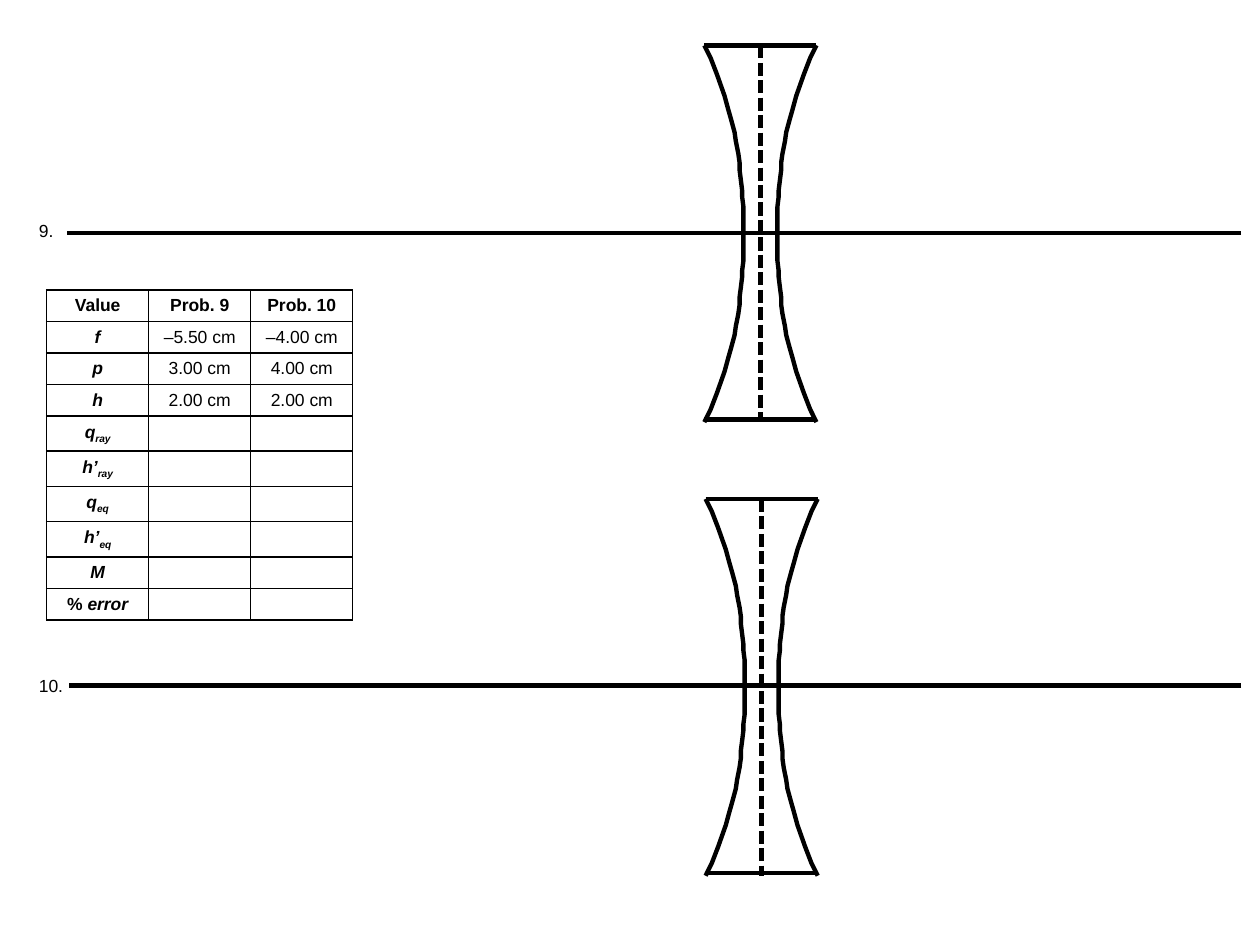
"""Build a diverging-lens ray diagram worksheet slide."""
from lxml.etree import SubElement
from pptx import Presentation
from pptx.dml.color import RGBColor
from pptx.enum.dml import MSO_LINE
from pptx.enum.shapes import MSO_CONNECTOR
from pptx.enum.text import MSO_ANCHOR, MSO_AUTO_SIZE, PP_ALIGN
from pptx.oxml import parse_xml
from pptx.oxml.ns import nsdecls, qn
from pptx.util import Inches, Pt

BLACK = RGBColor(0x00, 0x00, 0x00)
FONT = "Arial"
TEXT_SIZE = Pt(10)
STROKE = Pt(2.5)

LENS_WIDTH, LENS_HEIGHT = 0.89, 2.99
CURVE = [
    (0, 0), (0.05, 0.1), (0.1, 0.23), (0.16, 0.4), (0.19, 0.51), (0.21, 0.58),
    (0.24, 0.69), (0.25, 0.76), (0.27, 0.86), (0.28, 0.93), (0.28, 0.99),
    (0.29, 1.07), (0.3, 1.15), (0.3, 1.2), (0.31, 1.28), (0.31, 1.49),
]

PROBLEMS = [
    ("9.", 1.7, 0.32, 0.53, 1.85, 5.59, 0.36),
    ("10.", 5.31, 0.39, 0.55, 5.44, 5.6, 3.96),
]

HEADINGS = ["Value", "Prob. 9", "Prob. 10"]
QUANTITIES = [
    ("f", "", "–5.50 cm", "–4.00 cm"),
    ("p", "", "3.00 cm", "4.00 cm"),
    ("h", "", "2.00 cm", "2.00 cm"),
    ("q", "ray", "", ""),
    ("h’", "ray", "", ""),
    ("q", "eq", "", ""),
    ("h’", "eq", "", ""),
    ("M", "", "", ""),
    ("% error", "", "", ""),
]


def add_run(paragraph, text, bold=False, italic=False, subscript=False):
    """Append one formatted run to a paragraph."""
    run = paragraph.add_run()
    run.text = text
    font = run.font
    font.name, font.size = FONT, TEXT_SIZE
    font.bold, font.italic = bold, italic
    font.color.rgb = BLACK
    if subscript:
        font._element.set("baseline", "-25000")


def add_line(shapes, start, end, dashed=False):
    """Draw a straight black line between two points in inches."""
    line = shapes.add_connector(
        MSO_CONNECTOR.STRAIGHT, *map(Inches, start), *map(Inches, end))
    line.line.color.rgb = BLACK
    line.line.width = STROKE
    if dashed:
        line.line.dash_style = MSO_LINE.SQUARE_DOT
    SubElement(line._element.spPr, qn("a:effectLst"))


def add_curve(shapes, corner_x, corner_y, x_sign, y_sign):
    """Draw one quarter of the lens outline from a corner to the axis."""
    points = [(Inches(corner_x + x_sign * dx), Inches(corner_y + y_sign * dy))
              for dx, dy in CURVE]
    builder = shapes.build_freeform(*points[0])
    builder.add_line_segments(points[1:], close=False)
    curve = builder.convert_to_shape()
    curve.shadow.inherit = False
    curve.fill.background()
    curve.line.color.rgb = BLACK
    curve.line.width = STROKE


def add_lens(slide, left, top):
    """Draw a concave lens as a group of curves and lines."""
    shapes = slide.shapes.add_group_shape().shapes
    right, bottom = left + LENS_WIDTH, top + LENS_HEIGHT
    middle = left + LENS_WIDTH / 2
    for x, x_sign in ((left, 1), (right, -1)):
        for y, y_sign in ((top, 1), (bottom, -1)):
            add_curve(shapes, x, y, x_sign, y_sign)
    add_line(shapes, (middle, top), (middle, bottom), dashed=True)
    for edge in (top, bottom - 0.02):
        add_line(shapes, (left, edge), (right, edge))


def add_number(slide, text, top, width):
    """Add a problem number beside its axis."""
    box = slide.shapes.add_textbox(
        Inches(0.21), Inches(top), Inches(width), Inches(0.27))
    frame = box.text_frame
    frame.word_wrap = False
    frame.auto_size = MSO_AUTO_SIZE.SHAPE_TO_FIT_TEXT
    add_run(frame.paragraphs[0], text)


def format_cell(cell):
    """Clear the fill, draw the borders and centre the text of a cell."""
    cell.fill.background()
    cell.margin_top = cell.margin_bottom = Inches(0.04)
    cell.vertical_anchor = MSO_ANCHOR.MIDDLE
    cell.text_frame.paragraphs[0].alignment = PP_ALIGN.CENTER
    properties = cell._tc.get_or_add_tcPr()
    for index, side in enumerate(("lnL", "lnR", "lnT", "lnB")):
        properties.insert(index, parse_xml(
            f'<a:{side} {nsdecls("a")} w="{Pt(1)}"><a:solidFill>'
            f'<a:srgbClr val="{BLACK}"/></a:solidFill></a:{side}>'))


def write_quantity(paragraph, symbol, subscript):
    """Write a quantity symbol with its optional subscript."""
    if symbol.startswith("% "):
        add_run(paragraph, "% ", bold=True)
        symbol = symbol[2:]
    add_run(paragraph, symbol, bold=True, italic=True)
    if subscript:
        add_run(paragraph, subscript, bold=True, italic=True, subscript=True)


def write_value(paragraph, value):
    """Write a value, or keep an empty cell at the text size."""
    if value:
        add_run(paragraph, value)
    else:
        SubElement(paragraph._p, qn("a:endParaRPr"), sz=str(int(TEXT_SIZE.pt * 100)))


def add_value_table(slide):
    """Add the table of given and measured values."""
    table = slide.shapes.add_table(
        len(QUANTITIES) + 1, len(HEADINGS),
        Inches(0.37), Inches(2.3), Inches(2.43), Inches(2.67)).table
    table.first_row = table.horz_banding = False
    for column in table.columns:
        column.width = Inches(0.81)
    for cell in table.iter_cells():
        format_cell(cell)
    table.rows[0].height = Inches(0.25)
    for column, heading in enumerate(HEADINGS):
        add_run(table.cell(0, column).text_frame.paragraphs[0], heading, bold=True)
    for row, (symbol, subscript, *values) in enumerate(QUANTITIES, 1):
        table.rows[row].height = Inches(0.28 if subscript else 0.25)
        write_quantity(table.cell(row, 0).text_frame.paragraphs[0], symbol, subscript)
        for column, value in enumerate(values, 1):
            write_value(table.cell(row, column).text_frame.paragraphs[0], value)


def main():
    """Build and save the worksheet."""
    deck = Presentation()
    deck.slide_width, deck.slide_height = Inches(10), Inches(7.5)
    slide = deck.slides.add_slide(deck.slide_layouts[6])
    add_value_table(slide)
    for number, number_top, width, axis_left, axis_y, lens_left, lens_top in PROBLEMS:
        add_line(slide.shapes, (9.85, axis_y), (axis_left, axis_y))
        add_number(slide, number, number_top, width)
        add_lens(slide, lens_left, lens_top)
    deck.save("out.pptx")


if __name__ == "__main__":
    main()
